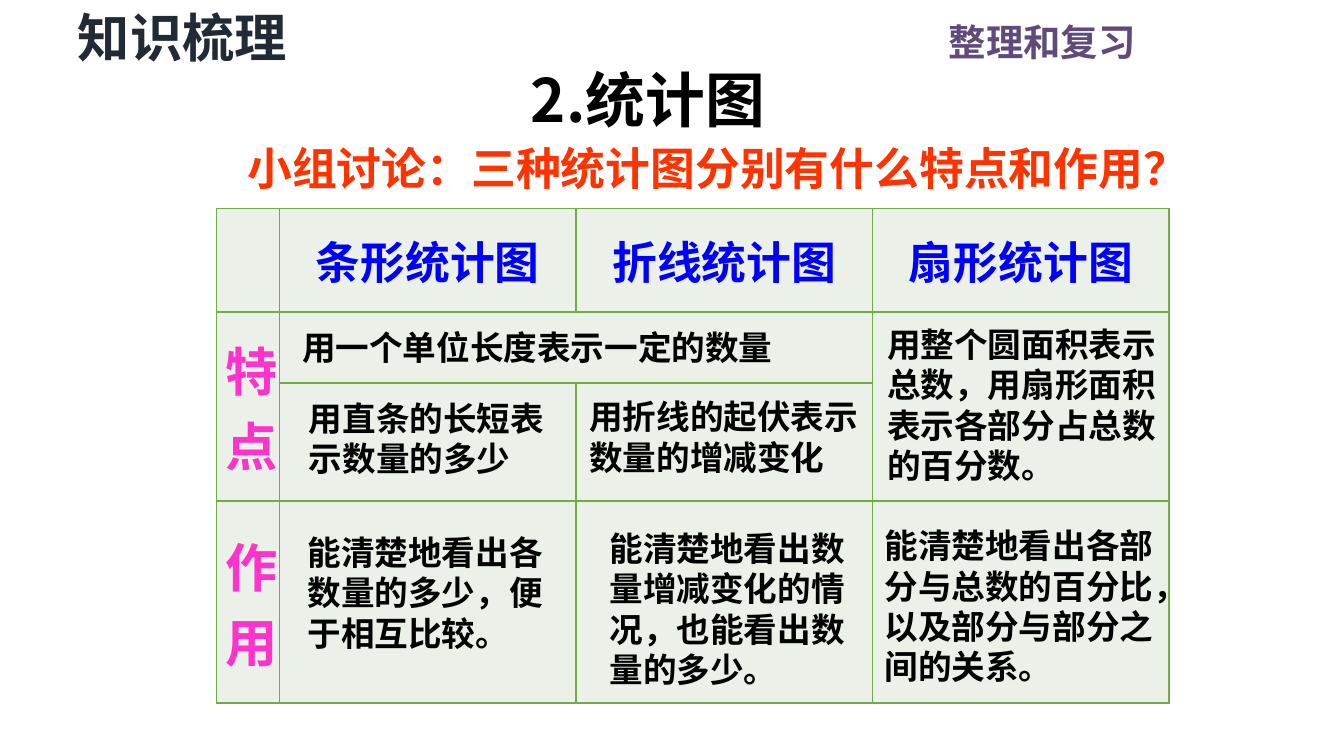
from lxml.etree import SubElement
from pptx import Presentation
from pptx.dml.color import RGBColor
from pptx.enum.text import MSO_ANCHOR as Anchor, MSO_AUTO_SIZE as AutoSize, PP_ALIGN as Align
from pptx.oxml import parse_xml
from pptx.oxml.ns import nsdecls, qn
from pptx.util import Inches, Pt

FONT = "Noto Sans CJK SC"
BLACK = RGBColor(0x00, 0x00, 0x00)
SLATE = RGBColor(0x22, 0x2A, 0x35)
PURPLE = RGBColor(0x60, 0x4A, 0x7B)
ORANGE = RGBColor(0xFF, 0x33, 0x00)
BLUE = RGBColor(0x00, 0x00, 0xFF)
PINK = RGBColor(0xFF, 0x33, 0xCC)
PALE_GREEN = RGBColor(0xEB, 0xF1, 0xE9)
GREEN = RGBColor(0x70, 0xAD, 0x47)

TABLE_LEFT, TABLE_TOP, TABLE_WIDTH = 1.61, 1.55, 7.09
LABEL_WIDTH = 0.47
COLUMNS = [LABEL_WIDTH] + [(TABLE_WIDTH - LABEL_WIDTH) / 3] * 3
ROWS = [0.77, 0.53, 0.88, 1.5]

# Table headings: (row, column, text, size, colour)
HEADINGS = [
    (0, 1, "条形统计图", 24, BLUE),
    (0, 2, "折线统计图", 24, BLUE),
    (0, 3, "扇形统计图", 24, BLUE),
    (1, 0, "特点", 28, PINK),
    (3, 0, "作用", 28, PINK),
]

# Answers: (row, column, offset from the cell's corner, size of the box, text)
ANSWERS = [
    (1, 1, (0.07, 0.06), (3.74, 0.4), "用一个单位长度表示一定的数量"),
    (1, 3, (0.01, 0.04), (2.24, 1.31), "用整个圆面积表示总数，用扇形面积表示各部分占总数的百分数。"),
    (2, 1, (0.12, 0.06), (2.08, 0.71), "用直条的长短表示数量的多少"),
    (2, 2, (0, 0.05), (2.29, 0.71), "用折线的起伏表示数量的增减变化"),
    (3, 1, (0.11, 0.18), (2.08, 1.01), "能清楚地看出各数量的多少，便于相互比较。"),
    (3, 2, (0.15, 0.15), (2.07, 1.31), "能清楚地看出数量增减变化的情况，也能看出数量的多少。"),
    (3, 3, (-0.01, 0.13), (2.27, 1.31), "能清楚地看出各部分与总数的百分比，以及部分与部分之间的关系。"),
]


def write(frame, text, size, color, align):
    paragraph = frame.paragraphs[0]
    paragraph.alignment = align
    paragraph.space_before = Pt(0)
    run = paragraph.add_run()
    run.text = text
    font = run.font
    font.size, font.bold, font.name = Pt(size), True, FONT
    font.color.rgb = color
    SubElement(font._element, qn("a:ea"), typeface=FONT)


def fill_box(box, text, size, color, align=Align.LEFT, insets=(0.1, 0.05)):
    frame = box.text_frame
    frame.word_wrap = True
    frame.auto_size = AutoSize.NONE
    frame.vertical_anchor = Anchor.TOP
    side, edge = map(Inches, insets)
    frame.margin_left = frame.margin_right = side
    frame.margin_top = frame.margin_bottom = edge
    write(frame, text, size, color, align)


def add_text(slide, left, top, width, height, *content, **layout):
    box = slide.shapes.add_textbox(*map(Inches, (left, top, width, height)))
    fill_box(box, *content, **layout)


def set_title(slide, left, top, width, height, *content, **layout):
    title = slide.shapes.title
    title.left, title.top = Inches(left), Inches(top)
    title.width, title.height = Inches(width), Inches(height)
    fill_box(title, *content, **layout)


def style_cell(cell):
    cell.fill.solid()
    cell.fill.fore_color.rgb = PALE_GREEN
    properties = cell._tc.get_or_add_tcPr()
    for position, side in enumerate("LRTB"):
        properties.insert(position, parse_xml(
            f'<a:ln{side} {nsdecls("a")} w="{Pt(1)}"><a:solidFill>'
            f'<a:srgbClr val="{GREEN}"/></a:solidFill></a:ln{side}>'))


def add_comparison_table(slide):
    table = slide.shapes.add_table(
        len(ROWS), len(COLUMNS), Inches(TABLE_LEFT), Inches(TABLE_TOP),
        Inches(TABLE_WIDTH), Inches(sum(ROWS))).table
    for column, width in zip(table.columns, COLUMNS):
        column.width = Inches(width)
    for row, height in zip(table.rows, ROWS):
        row.height = Inches(height)
    for cell in table.iter_cells():
        style_cell(cell)

    # Shared cells
    for first, last in [((1, 0), (2, 0)), ((1, 1), (1, 2)), ((1, 3), (2, 3))]:
        table.cell(*first).merge(table.cell(*last))

    for row, column, text, size, color in HEADINGS:
        cell = table.cell(row, column)
        cell.vertical_anchor = Anchor.MIDDLE
        cell.margin_left = cell.margin_right = Inches(0.07)
        cell.margin_top = cell.margin_bottom = Inches(0.04)
        write(cell.text_frame, text, size, color, Align.CENTER)


def add_answers(slide):
    for row, column, (dx, dy), (width, height), text in ANSWERS:
        left = TABLE_LEFT + sum(COLUMNS[:column]) + dx
        top = TABLE_TOP + sum(ROWS[:row]) + dy
        add_text(slide, left, top, width, height, text, 18, BLACK)


def main():
    deck = Presentation()
    deck.slide_width = Inches(10)
    deck.slide_height = deck.slide_width * 9 // 16
    slide = deck.slides.add_slide(deck.slide_layouts[5])

    # Header and title
    add_text(slide, 5.79, 0.09, 2.76, 0.44, "整理和复习", 20, PURPLE, align=Align.RIGHT)
    add_text(slide, 0.51, 0, 2.02, 0.55, "知识梳理", 28, SLATE, insets=(0.07, 0.04))
    set_title(slide, 3.88, 0.43, 3.71, 0.61, "2.统计图", 32, BLACK, insets=(0.07, 0.04))

    # Discussion question and its answers
    add_comparison_table(slide)
    add_text(slide, 1.69, 1, 7.3, 0.5, "小组讨论：三种统计图分别有什么特点和作用？",
             24, ORANGE, align=Align.CENTER)
    add_answers(slide)

    deck.save("out.pptx")


if __name__ == "__main__":
    main()
